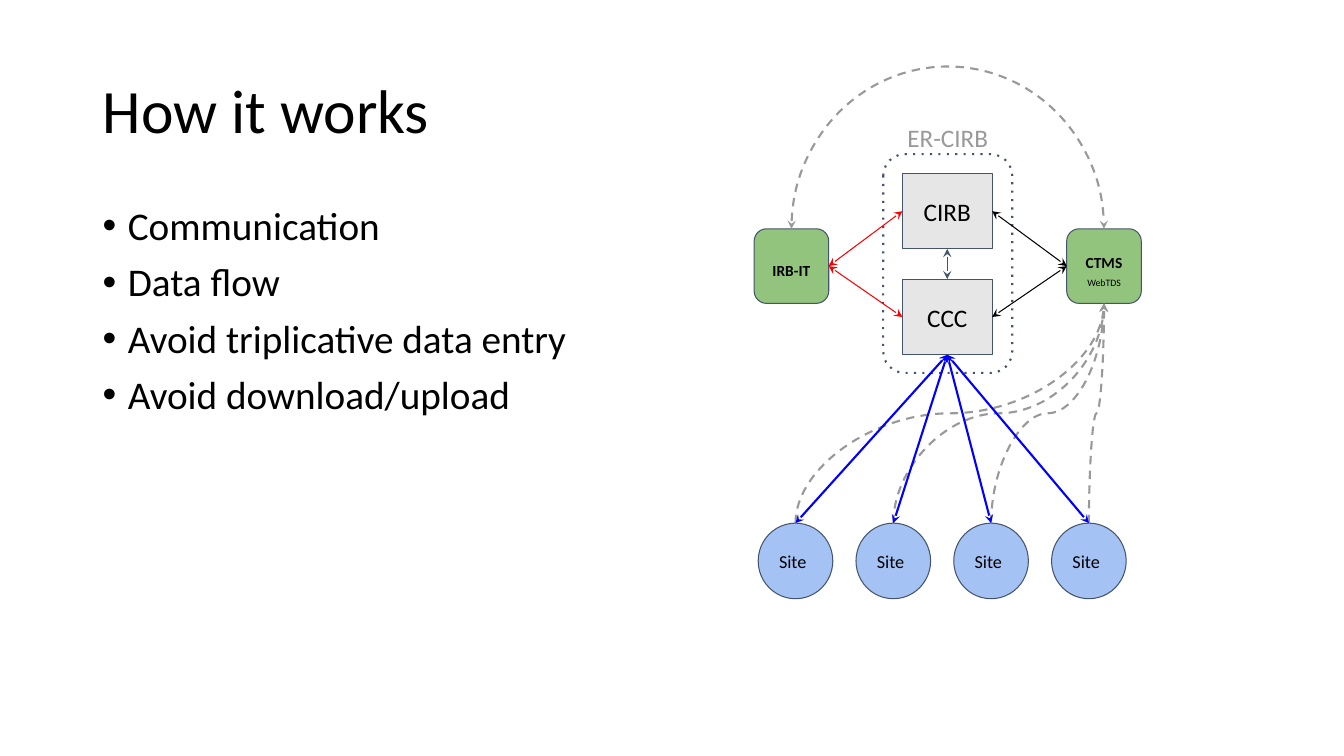
from dataclasses import dataclass
from typing import Optional

import pptx
import pptx.dml.color
import pptx.enum.dml
import pptx.enum.shapes
import pptx.enum.text
import pptx.oxml
import pptx.oxml.ns
import pptx.util
from lxml import etree

SHAPE = pptx.enum.shapes.MSO_SHAPE
CONN = pptx.enum.shapes.MSO_CONNECTOR
ALIGN = pptx.enum.text.PP_ALIGN
MIDDLE = pptx.enum.text.MSO_ANCHOR.MIDDLE
SCALE = 9144  # EMU in one px, 100 px to the inch
TOP, LEFT, BOTTOM, RIGHT = range(4)


@dataclass(frozen=True)
class Theme:
    font: str = "Calibri"
    ink: str = "000000"
    edge: str = "44546A"
    gray: str = "999999"
    box: str = "E7E6E6"
    green: str = "93C47D"
    site: str = "A4C2F4"
    red: str = "FF0000"
    blue: str = "0000FF"
    title: int = 44
    body: int = 28
    label: int = 18
    small: int = 13
    tool: int = 11
    note: int = 7
    thin: float = 0.75
    thick: float = 1.5


THEME = Theme()


@dataclass(frozen=True)
class Node:
    key: str
    kind: int
    x: int
    y: int
    w: int
    h: int
    text: str = ""
    size: int = THEME.label
    fill: Optional[str] = None
    width: float = THEME.thin
    dash: Optional[str] = None
    align: int = ALIGN.CENTER
    bold: bool = False
    space: float = 1.0
    note: str = ""


@dataclass(frozen=True)
class Link:
    start: str
    out: int
    end: str
    into: int
    color: str
    width: float = THEME.thin


def px(n: float) -> int:
    return round(n * SCALE)


def rgb(code: str):
    return pptx.dml.color.RGBColor.from_string(code)


def style(para, size: int, color: str, bold: bool = False) -> None:
    para.font.name = THEME.font
    para.font.size = pptx.util.Pt(size)
    para.font.bold = bold
    para.font.color.rgb = rgb(color)


def sub(parent, tag: str, **attrs: str):
    return etree.SubElement(parent, pptx.oxml.ns.qn(tag), attrs)


def stroke(shape, color: str, width: float, dash: Optional[str] = None,
           head: bool = False, tail: bool = False) -> None:
    shape.line.color.rgb = rgb(color)
    shape.line.width = pptx.util.Pt(width)
    line = shape._element.spPr.find(pptx.oxml.ns.qn("a:ln"))
    if dash:
        sub(line, "a:prstDash", val=dash)
    if head:
        sub(line, "a:headEnd", type="stealth")
    if tail:
        sub(line, "a:tailEnd", type="stealth")


def inset(frame) -> None:
    frame.word_wrap = True
    frame.vertical_anchor = MIDDLE
    frame.margin_left = frame.margin_right = px(10)
    frame.margin_top = frame.margin_bottom = px(10)


def draw(slide, node: Node):
    shape = slide.shapes.add_shape(
        node.kind, px(node.x), px(node.y), px(node.w), px(node.h))
    shape.shadow.inherit = False
    if node.fill:
        shape.fill.solid()
        shape.fill.fore_color.rgb = rgb(node.fill)
    else:
        shape.fill.background()
    stroke(shape, THEME.edge, node.width, node.dash)
    if node.text:
        inset(shape.text_frame)
        para = shape.text_frame.paragraphs[0]
        para.text = node.text
        para.alignment = node.align
        para.line_spacing = node.space
        style(para, node.size, THEME.ink, node.bold)
        if node.note:
            run = para.add_run()
            run.text = node.note
            run.font.size = pptx.util.Pt(THEME.note)
            run.font.bold = False
    return shape


def join(slide, shapes: dict, link: Link, kind: int = CONN.STRAIGHT):
    line = slide.shapes.add_connector(kind, 0, 0, 0, 0)
    line.begin_connect(shapes[link.start], link.out)
    line.end_connect(shapes[link.end], link.into)
    curved = kind == CONN.CURVE
    stroke(line, link.color, link.width, "dash" if curved else None,
           head=not curved, tail=True)
    sub(line._element.spPr, "a:effectLst")
    return line


def rise(slide, shapes: dict, link: Link) -> None:
    """Curve that leaves upwards and arrives from below."""
    line = join(slide, shapes, link, CONN.CURVE)
    midx = (line.begin_x + line.end_x) // 2
    midy = (line.begin_y + line.end_y) // 2
    wide, tall = line.height, line.width
    form = line._element.spPr.find(pptx.oxml.ns.qn("a:xfrm"))
    for flip in ("flipH", "flipV"):
        form.attrib.pop(flip, None)
    form.set("rot", str(270 * 60000))
    line.left, line.top = midx - wide // 2, midy - tall // 2
    line.width, line.height = wide, tall


def write(slide) -> None:
    # Title
    title = slide.shapes.title
    title.left, title.top, title.width, title.height = map(px, (92, 40, 1150, 145))
    title.text_frame.vertical_anchor = MIDDLE
    para = title.text_frame.paragraphs[0]
    para.text = "How it works"
    para.alignment = ALIGN.LEFT
    para.line_spacing = 0.9
    style(para, THEME.title, THEME.ink)

    # Bullets
    frame = slide.shapes.add_textbox(*map(px, (92, 200, 1150, 476))).text_frame
    frame.word_wrap = True
    items = ("Communication", "Data flow", "Avoid triplicative data entry",
             "Avoid download/upload")
    for i, item in enumerate(items):
        para = frame.add_paragraph() if i else frame.paragraphs[0]
        para.text = item
        para.line_spacing = 0.9
        if i:
            para.space_before = pptx.util.Pt(10)
        props = para._p.get_or_add_pPr()
        props.set("marL", str(px(25)))
        props.set("indent", str(px(-25)))
        sub(props, "a:buFont", typeface="Arial")
        sub(props, "a:buChar", char="•")
        style(para, THEME.body, THEME.ink)


def chart(slide) -> None:
    # Nodes
    sites = [f"site{i}" for i in range(4)]
    nodes = [Node(key, SHAPE.OVAL, 752 + 97 * i, 519, 74, 75, "Site", THEME.small,
                  THEME.site, align=ALIGN.LEFT) for i, key in enumerate(sites)]
    nodes += [
        Node("group", SHAPE.ROUNDED_RECTANGLE, 876, 153, 128, 217,
             width=THEME.thick, dash="dot"),
        Node("ccc", SHAPE.RECTANGLE, 895, 277, 89, 75, "CCC", fill=THEME.box),
        Node("cirb", SHAPE.RECTANGLE, 895, 172, 89, 75, "CIRB", fill=THEME.box),
        Node("ctms", SHAPE.ROUNDED_RECTANGLE, 1058, 227, 74, 74, "CTMS ", THEME.tool,
             THEME.green, bold=True, space=1.5, note="WebTDS"),
        Node("irb", SHAPE.ROUNDED_RECTANGLE, 748, 227, 74, 74, "IRB-IT", THEME.tool,
             THEME.green, bold=True, space=1.5),
    ]
    shapes = {node.key: draw(slide, node) for node in nodes}

    # Group label
    frame = slide.shapes.add_textbox(*map(px, (876, 121, 128, 30))).text_frame
    inset(frame)
    para = frame.paragraphs[0]
    para.text = "ER-CIRB"
    para.alignment = ALIGN.CENTER
    style(para, THEME.label, THEME.gray)

    # Dashed curves from the sites
    for key in sites:
        rise(slide, shapes, Link(key, TOP, "ctms", BOTTOM, THEME.gray, THEME.thick))

    # Straight arrows
    links = [Link("cirb", BOTTOM, "ccc", TOP, THEME.edge)]
    links += [Link(key, TOP, "ccc", BOTTOM, THEME.blue, THEME.thick) for key in sites]
    for key in ("cirb", "ccc"):
        links += [Link("irb", RIGHT, key, LEFT, THEME.red),
                  Link(key, RIGHT, "ctms", LEFT, THEME.ink)]
    for link in links:
        join(slide, shapes, link)

    # Arc over the group: half an ellipse
    arc = slide.shapes.add_shape(SHAPE.ARC, *map(px, (785, 66, 310, 322)))
    arc.adjustments[0], arc.adjustments[1] = 108, 0
    arc.shadow.inherit = False
    arc.fill.background()
    stroke(arc, THEME.gray, THEME.thick, "dash", head=True, tail=True)


def main() -> None:
    deck = pptx.Presentation()
    deck.slide_width, deck.slide_height = px(1333), px(750)
    slide = deck.slides.add_slide(deck.slide_layouts[5])
    write(slide)
    chart(slide)
    deck.save("out.pptx")


if __name__ == "__main__":
    main()
